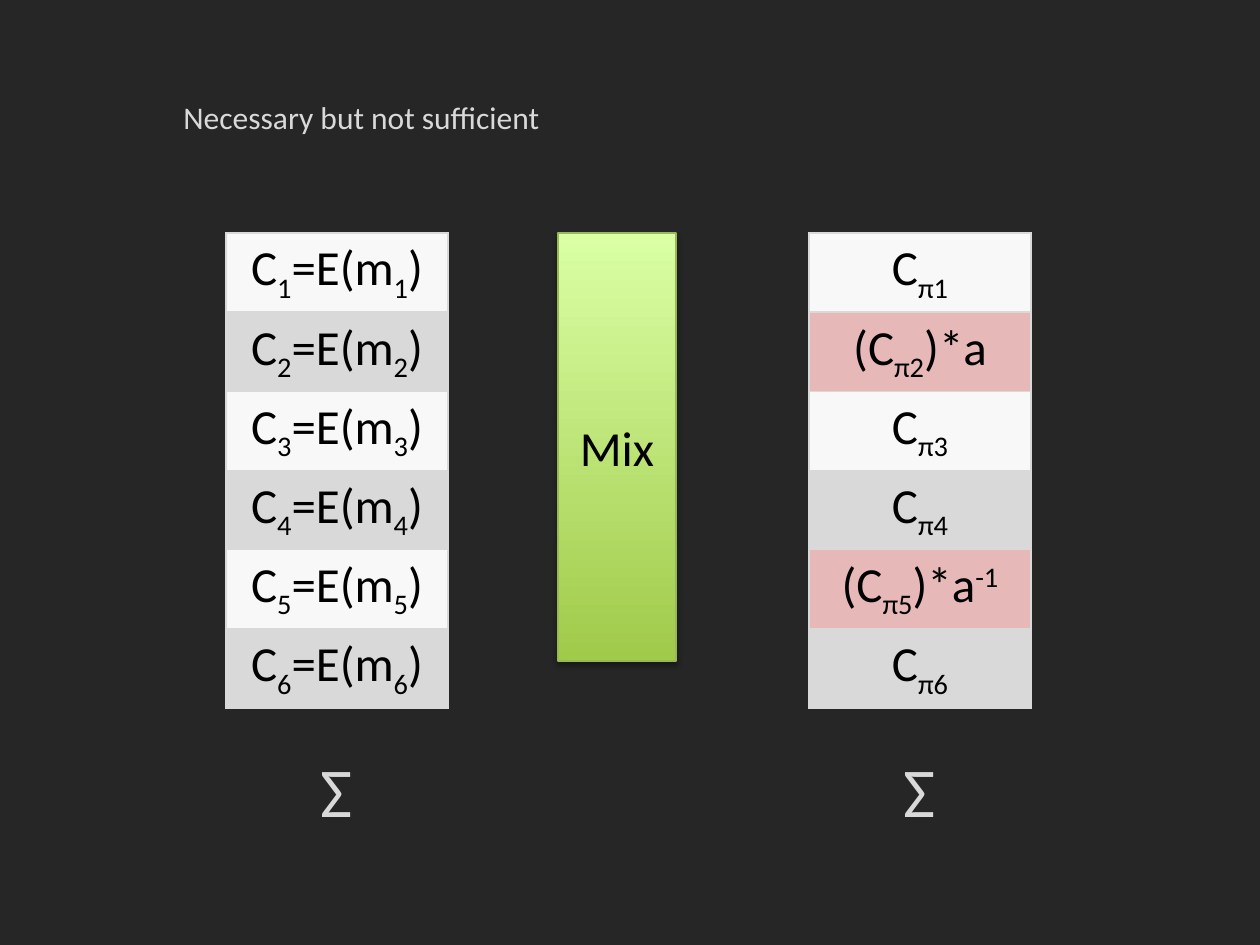
from dataclasses import dataclass

from lxml.etree import SubElement
from pptx import Presentation
from pptx.dml.color import RGBColor
from pptx.enum.shapes import MSO_SHAPE as Shape
from pptx.enum.text import MSO_ANCHOR as Anchor, MSO_AUTO_SIZE as AutoSize, PP_ALIGN as Align
from pptx.oxml.ns import qn
from pptx.util import Pt

EMU_PER_PX = 914400 / 126
SUB, SUPER = -25000, 30000


def px(length):
    return round(length * EMU_PER_PX)


@dataclass(frozen=True)
class Theme:
    font: str = "Calibri"
    background: str = "262626"
    light_text: str = "D9D9D9"
    dark_text: str = "000000"
    border: str = "D9D9D9"
    rows: tuple = ("F8F8F8", "D9D9D9")
    tampered: str = "E6B9B8"
    mix_bottom: str = "A0CA4A"
    mix_top: str = "DAFFA5"
    mix_line: str = "98B955"
    shadow: str = "000000"
    note_size: int = 18
    body_size: int = 28
    sum_size: int = 40


def rgb(value):
    return RGBColor.from_string(value)


def add_color(parent, value):
    return SubElement(parent, qn("a:srgbClr"), val=value)


class SlideBuilder:
    def __init__(self, page, theme):
        self.page = page
        self.theme = theme
        fill = page.background.fill
        fill.solid()
        fill.fore_color.rgb = rgb(theme.background)

    def style(self, span, size, color):
        span.font.name = self.theme.font
        span.font.size = Pt(size)
        span.font.color.rgb = rgb(color)

    def text(self, left, top, width, height, words, size):
        box = self.page.shapes.add_textbox(px(left), px(top), px(width), px(height))
        frame = box.text_frame
        frame.text = words
        frame.word_wrap = False
        frame.auto_size = AutoSize.SHAPE_TO_FIT_TEXT
        self.style(frame.paragraphs[0].runs[0], size, self.theme.light_text)

    def mix_block(self, left, top, width, height, words):
        theme = self.theme
        block = self.page.shapes.add_shape(
            Shape.RECTANGLE, px(left), px(top), px(width), px(height))
        block.fill.gradient()
        block.fill.gradient_angle = 90
        for stop, color in zip(block.fill.gradient_stops, (theme.mix_bottom, theme.mix_top)):
            stop.color.rgb = rgb(color)
        block.line.color.rgb = rgb(theme.mix_line)
        block.line.width = Pt(0.75)
        self.drop_shadow(block)
        frame = block.text_frame
        frame.text = words
        frame.vertical_anchor = Anchor.MIDDLE
        para = frame.paragraphs[0]
        para.alignment = Align.CENTER
        self.style(para.runs[0], theme.body_size, theme.dark_text)

    def drop_shadow(self, shape):
        shape.shadow.inherit = False
        effects = shape._element.spPr.find(qn("a:effectLst"))
        shadow = SubElement(effects, qn("a:outerShdw"), blurRad=str(Pt(3.1)),
                            dist=str(Pt(1.8)), dir="5400000", rotWithShape="0")
        SubElement(add_color(shadow, self.theme.shadow), qn("a:alpha"), val="35000")

    def formula_table(self, left, top, width, height, row_height, formulas, tampered=()):
        """Draw one formula per row; a formula is a list of (text, baseline)."""
        frame = self.page.shapes.add_table(
            len(formulas), 1, px(left), px(top), px(width), px(height))
        table = frame.table
        table.first_row = table.horz_banding = False
        for index, formula in enumerate(formulas):
            table.rows[index].height = px(row_height)
            cell = table.cell(index, 0)
            self.borders(cell)
            cell.fill.solid()
            color = self.theme.tampered if index in tampered else self.theme.rows[index % 2]
            cell.fill.fore_color.rgb = rgb(color)
            para = cell.text_frame.paragraphs[0]
            para.alignment = Align.CENTER
            for words, baseline in formula:
                span = para.add_run()
                span.text = words
                self.style(span, self.theme.body_size, self.theme.dark_text)
                if baseline:
                    span._r.get_or_add_rPr().set("baseline", str(baseline))
        frame.height = px(height)

    def borders(self, cell):
        properties = cell._tc.get_or_add_tcPr()
        for side in ("lnL", "lnR", "lnT", "lnB"):
            line = SubElement(properties, qn(f"a:{side}"), w=str(Pt(1)))
            add_color(SubElement(line, qn("a:solidFill")), self.theme.border)


def encrypted(number):
    return [("C", 0), (f"{number}", SUB), ("=E(m", 0), (f"{number}", SUB), (")", 0)]


def permuted(number):
    return [("C", 0), (f"π{number}", SUB)]


def multiplied(number, *exponent):
    return [("(C", 0), (f"π{number}", SUB), (")*a", 0), *exponent]


def main():
    deck = Presentation()
    deck.slide_width, deck.slide_height = px(1260), px(945)
    theme = Theme()
    slide = SlideBuilder(deck.slides.add_slide(deck.slide_layouts[6]), theme)

    top, height, row_height = 233, 428, 52
    table_width, sum_width = 222, 58
    input_left, output_left = 226, 809
    numbers = range(1, 7)
    outputs = [permuted(number) for number in numbers]
    outputs[1] = multiplied(2)
    outputs[4] = multiplied(5, ("-1", SUPER))

    slide.formula_table(input_left, top, table_width, height, row_height,
                        [encrypted(number) for number in numbers])
    slide.mix_block(558, top, 118, height, "Mix")
    slide.formula_table(output_left, top, table_width, height, row_height,
                        outputs, tampered=(1, 4))
    for left in (input_left, output_left):
        slide.text(left + (table_width - sum_width) // 2, 741, sum_width, 97,
                   "Σ", theme.sum_size)
    slide.text(171, 92, 386, 50, "Necessary but not sufficient", theme.note_size)
    deck.save("out.pptx")


if __name__ == "__main__":
    main()
